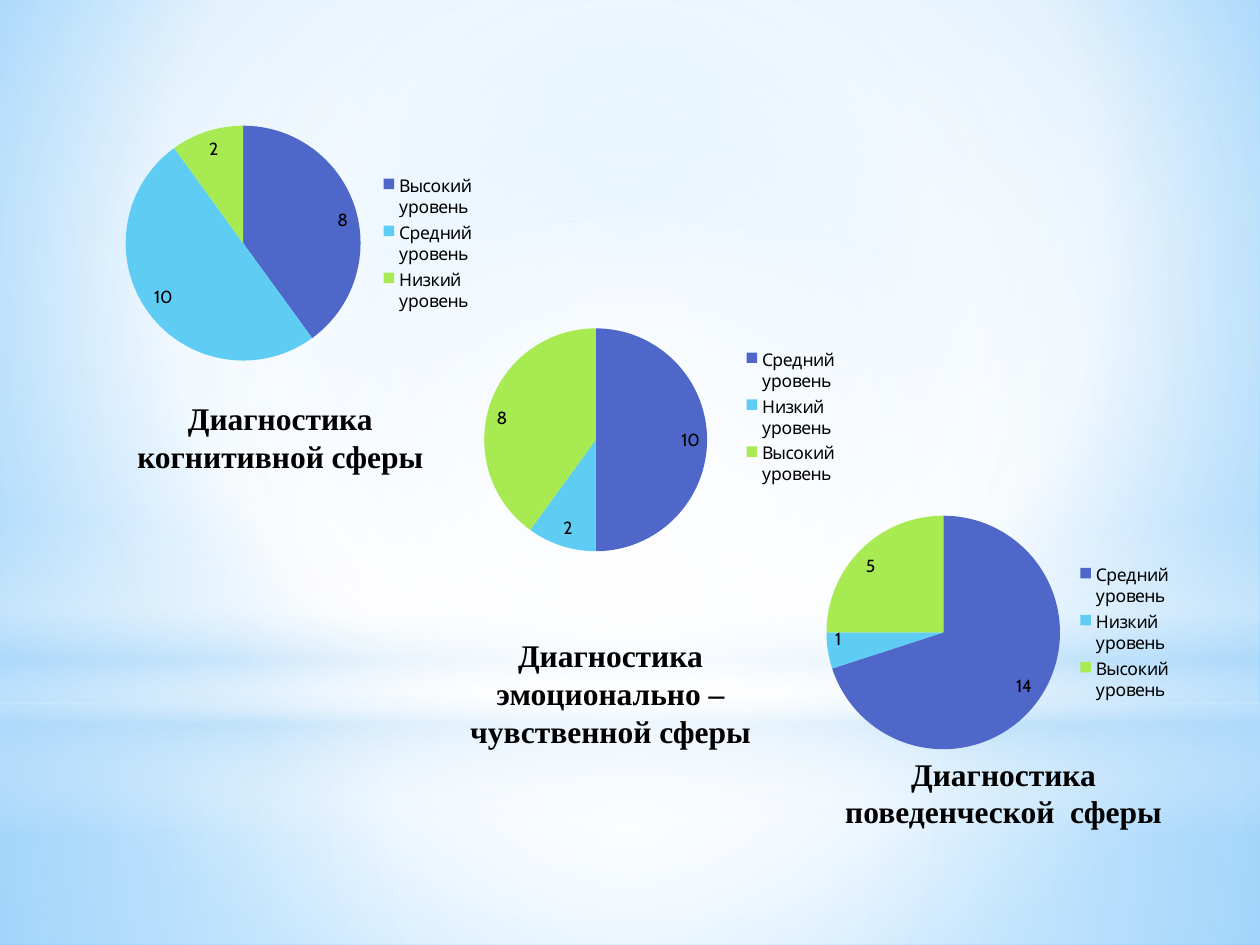
import pptx
import pptx.chart.data
import pptx.dml.color
import pptx.enum.chart
import pptx.enum.shapes
import pptx.enum.text
import pptx.oxml
import pptx.oxml.ns
import pptx.util
from pptx.util import Inches

COLORS = {"text": "000000", "white": "FFFFFF", "pale": "B4DCFA",
          "sky": "9ED5FF", "azure": "5BB9FF",
          "blue": "4E67C8", "cyan": "5ECCF3", "lime": "A7EA52"}
SLICES = ("blue", "cyan", "lime")
CENTER = (50, 50, 50, 50)
HIGH, MIDDLE, LOW = "Высокий уровень", "Средний уровень", "Низкий уровень"


def rgb(name):
    return pptx.dml.color.RGBColor.from_string(COLORS[name])


def set_format(obj, values):
    for name, value in values.items():
        setattr(obj, name, value)


class Deck:
    """Holds the text style and the current slide."""

    caption_font = {"name": "Times New Roman", "size": pptx.util.Pt(18), "bold": True}
    chart_font = {"name": "Cabin", "size": pptx.util.Pt(10)}

    def __init__(self, prs):
        self.slide = prs.slides.add_slide(prs.slide_layouts[6])

    def gradient(self, fill, element, stops, focus=None):
        """Stops are (position, colour, opacity); without a focus it runs downwards."""
        fill.solid()
        gs = "".join(
            f'<a:gs pos="{pos * 1000}"><a:srgbClr val="{COLORS[name]}">'
            f'<a:alpha val="{alpha * 1000}"/></a:srgbClr></a:gs>'
            for pos, name, alpha in stops)
        if focus:
            sides = " ".join(f'{k}="{v * 1000}"' for k, v in zip("ltrb", focus))
            shade = f'<a:path path="circle"><a:fillToRect {sides}/></a:path>'
        else:
            shade = '<a:lin ang="5400000" scaled="0"/>'
        grad = pptx.oxml.parse_xml(
            f'<a:gradFill {pptx.oxml.ns.nsdecls("a")} rotWithShape="1">'
            f'<a:gsLst>{gs}</a:gsLst>{shade}</a:gradFill>')
        solid = element.xpath(".//p:bgPr/a:solidFill | ./p:spPr/a:solidFill")[0]
        solid.getparent().replace(solid, grad)

    def background(self, stops, focus):
        self.gradient(self.slide.background.fill, self.slide._element, stops, focus)

    def glow(self, kind, box, stops, focus=None):
        sp = self.slide.shapes.add_shape(kind, *map(Inches, box))
        sp.shadow.inherit = False
        sp.line.fill.background()
        self.gradient(sp.fill, sp._element, stops, focus)

    def caption(self, box, text):
        tf = self.slide.shapes.add_textbox(*map(Inches, box)).text_frame
        set_format(tf, {"word_wrap": True,
                        "auto_size": pptx.enum.text.MSO_AUTO_SIZE.SHAPE_TO_FIT_TEXT})
        p = tf.paragraphs[0]
        p.alignment = pptx.enum.text.PP_ALIGN.CENTER
        r = p.add_run()
        r.text = text
        set_format(r.font, self.caption_font)
        r.font.color.rgb = rgb("text")

    def pie(self, box, cats, vals, plot=None):
        data = pptx.chart.data.CategoryChartData()
        data.categories = cats
        data.add_series("Series 1", vals)
        chart = self.slide.shapes.add_chart(
            pptx.enum.chart.XL_CHART_TYPE.PIE, *map(Inches, box), data).chart
        set_format(chart, {"has_title": False, "has_legend": True})
        set_format(chart.font, self.chart_font)
        chart.font.color.rgb = rgb("text")
        set_format(chart.legend, {"position": pptx.enum.chart.XL_LEGEND_POSITION.RIGHT,
                                  "include_in_layout": False})
        pie = chart.plots[0]
        set_format(pie, {"vary_by_categories": True, "has_data_labels": True})
        set_format(pie.data_labels, {
            "show_value": True, "show_percentage": False,
            "position": pptx.enum.chart.XL_LABEL_POSITION.INSIDE_END})
        for i, name in enumerate(SLICES):
            fill = pie.series[0].points[i].format.fill
            fill.solid()
            fill.fore_color.rgb = rgb(name)
        if plot:
            self.place_plot(chart, plot)

    def place_plot(self, chart, plot):
        area = chart._chartSpace.xpath(".//c:plotArea")[0]
        for old in area.xpath("./c:layout"):
            area.remove(old)
        parts = "".join(f'<c:{k} val="{v}"/>' for k, v in zip("xywh", plot))
        area.insert(0, pptx.oxml.parse_xml(
            f'<c:layout {pptx.oxml.ns.nsdecls("c")}><c:manualLayout>'
            '<c:layoutTarget val="inner"/><c:xMode val="edge"/><c:yMode val="edge"/>'
            f'{parts}</c:manualLayout></c:layout>'))


def main():
    prs = pptx.Presentation()
    set_format(prs, {"slide_width": Inches(10), "slide_height": Inches(7.5)})
    deck = Deck(prs)
    shape = pptx.enum.shapes.MSO_SHAPE

    # Sky background with soft glows
    deck.background([(0, "sky", 100), (60, "white", 100), (100, "azure", 100)],
                    (20, 10, 20, 60))
    deck.glow(shape.RECTANGLE, (0, 5.58, 10, 1.92),
              [(0, "white", 91), (37, "white", 76), (100, "pale", 79)], CENTER)
    deck.glow(shape.RECTANGLE, (0, 0, 10, 5.58),
              [(0, "white", 89), (48, "white", 62), (100, "pale", 79)], CENTER)
    deck.glow(shape.RECTANGLE, (0, 4.12, 10, 2.5),
              [(0, "white", 0), (29, "white", 30), (45, "pale", 40),
               (55, "white", 26), (65, "pale", 60), (100, "white", 0)])
    deck.glow(shape.OVAL, (0, 1.75, 10, 5.58),
              [(0, "white", 100), (56, "white", 0)], CENTER)

    # Cognitive sphere
    deck.caption((0.86, 3.12, 2.73, 0.71), "Диагностика когнитивной сферы")
    deck.pie((0.86, 0.7, 3.01, 2.46), (HIGH, MIDDLE, LOW), (8, 10, 2))

    # Emotional sphere
    deck.caption((3.44, 5, 2.81, 1.01), "Диагностика эмоционально – чувственной сферы")
    deck.pie((3.59, 1.8, 3.16, 3.02), (MIDDLE, LOW, HIGH), (10, 2, 8),
             (0.08, 0.12, 0.56, 0.88))

    # Behavioural sphere
    deck.caption((6.56, 5.94, 2.81, 0.71), "Диагностика поведенческой  сферы")
    deck.pie((6.41, 3.67, 2.99, 2.7), (MIDDLE, LOW, HIGH), (14, 1, 5),
             (0.05, 0.1, 0.62, 0.8))

    prs.save("out.pptx")


if __name__ == "__main__":
    main()
